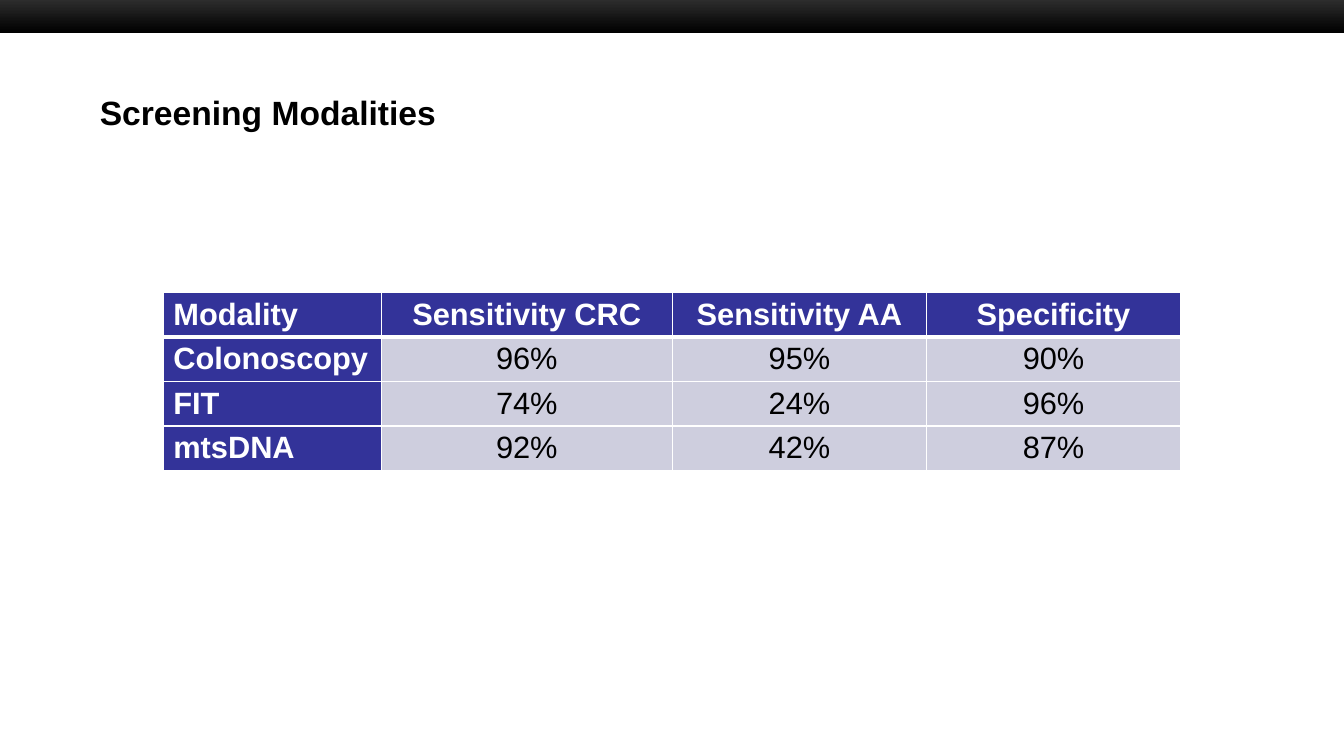
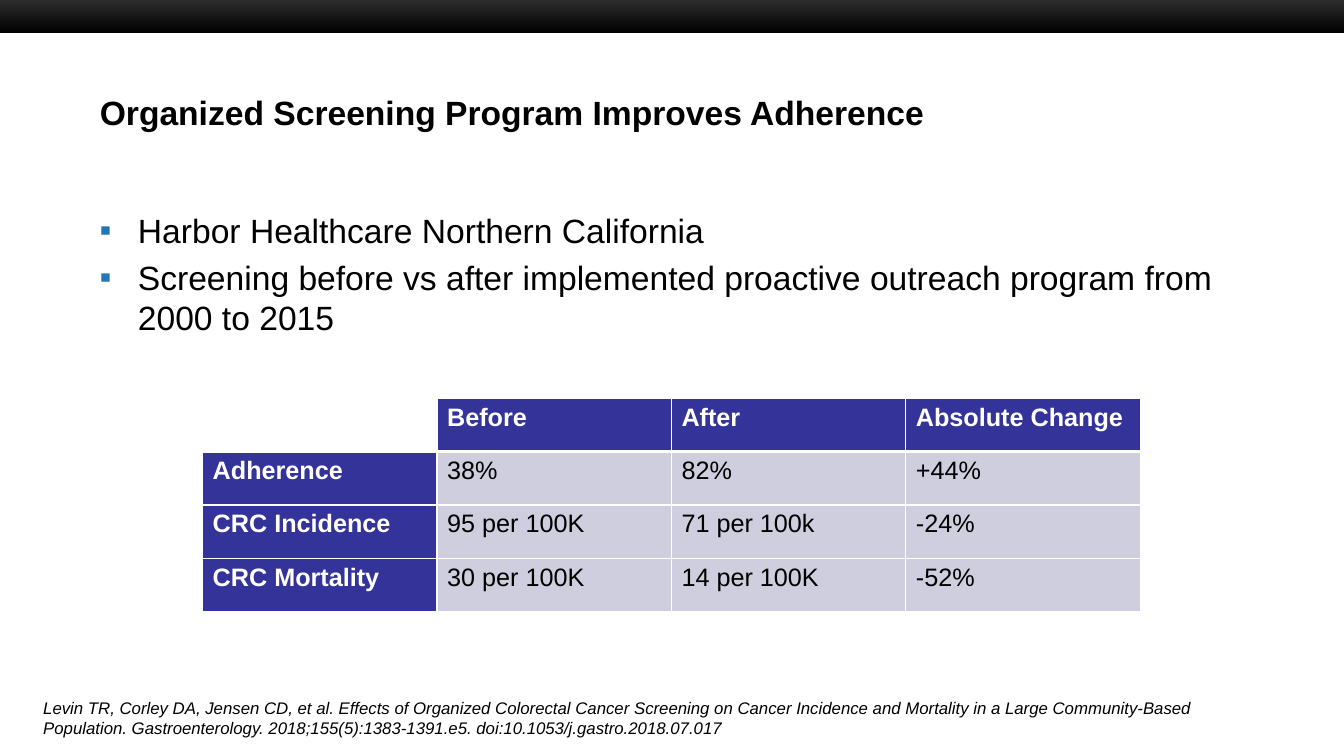
from dataclasses import dataclass

from lxml.etree import SubElement
from pptx import Presentation
from pptx.dml.color import RGBColor
from pptx.enum.shapes import MSO_SHAPE
from pptx.enum.text import MSO_ANCHOR, MSO_AUTO_SIZE, PP_ALIGN
from pptx.oxml.ns import qn
from pptx.slide import Slide
from pptx.table import _Cell as Cell
from pptx.text.text import TextFrame, _Paragraph as Para
from pptx.util import Inches, Pt

BLACK = RGBColor(0x00, 0x00, 0x00)
WHITE = RGBColor(0xFF, 0xFF, 0xFF)
GREY = RGBColor(0x33, 0x33, 0x33)
NAVY = RGBColor(0x33, 0x33, 0x99)
PALE = RGBColor(0xCE, 0xCE, 0xDE)
BLUE = RGBColor(0x26, 0x75, 0xB4)
FONT = "Arial"
WIDTH = 13.33
LEFT = 0.89
SPAN = 11.56


@dataclass(frozen=True)
class Grid:
    left: float
    top: float
    widths: tuple[float, ...]
    height: float
    size: int
    align: PP_ALIGN
    rows: tuple[tuple[str, ...], ...]


MODES = Grid(
    1.62, 2.9, (2.16, 2.89, 2.52, 2.52), 0.42, 22, PP_ALIGN.CENTER,
    (
        ("Modality", "Sensitivity CRC", "Sensitivity AA", "Specificity"),
        ("Colonoscopy", "96%", "95%", "90%"),
        ("FIT", "74%", "24%", "96%"),
        ("mtsDNA", "92%", "42%", "87%"),
    ),
)
CHANGE = Grid(
    2.01, 3.95, (9.3 / 4,) * 4, 0.53, 18, PP_ALIGN.LEFT,
    (
        ("", "Before", "After", "Absolute Change"),
        ("Adherence", "38%", "82%", "+44%"),
        ("CRC Incidence", "95 per 100K", "71 per 100k", "-24%"),
        ("CRC Mortality", "30 per 100K", "14 per 100K", "-52%"),
    ),
)
POINTS = (
    "Harbor Healthcare Northern California",
    "Screening before vs after implemented proactive outreach program from 2000 to 2015",
)
SOURCE = (
    "Levin TR, Corley DA, Jensen CD, et al. Effects of Organized Colorectal Cancer "
    "Screening on Cancer Incidence and Mortality in a Large Community-Based Population. "
    "Gastroenterology. 2018;155(5):1383-1391.e5. doi:10.1053/j.gastro.2018.07.017"
)


def write(para: Para, text: str, size: int, tint: RGBColor = BLACK,
          bold: bool = False, slant: bool = False) -> None:
    run = para.add_run()
    run.text = text
    font = run.font
    font.name, font.size = FONT, Pt(size)
    font.bold, font.italic = bold, slant
    font.color.rgb = tint


def add_band(slide: Slide) -> None:
    band = slide.shapes.add_shape(
        MSO_SHAPE.RECTANGLE, Inches(0), Inches(-0.05), Inches(WIDTH), Inches(0.38))
    band.shadow.inherit = False
    band.line.fill.background()
    band.fill.gradient()
    band.fill.gradient_angle = 270
    for stop, tint, spot in zip(band.fill.gradient_stops, (GREY, BLACK), (0, 1)):
        stop.color.rgb = tint
        stop.position = spot


def add_page(deck: Presentation, text: str) -> Slide:
    slide = deck.slides.add_slide(deck.slide_layouts[5])
    add_band(slide)
    title = slide.shapes.title
    title.left, title.top = Inches(LEFT), Inches(0.83)
    title.width, title.height = Inches(SPAN), Inches(0.75)
    frame = title.text_frame
    frame.auto_size = MSO_AUTO_SIZE.NONE
    frame.vertical_anchor = MSO_ANCHOR.TOP
    frame.margin_top = Inches(0.08)
    para = frame.paragraphs[0]
    para.alignment = PP_ALIGN.LEFT
    write(para, text, 24, bold=True)
    return slide


def add_box(slide: Slide, left: float, top: float, width: float, height: float) -> TextFrame:
    box = slide.shapes.add_textbox(Inches(left), Inches(top), Inches(width), Inches(height))
    box.text_frame.word_wrap = True
    return box.text_frame


def add_list(slide: Slide, items: tuple[str, ...]) -> None:
    frame = add_box(slide, LEFT, 2, SPAN, 4.25)
    frame.margin_top = Inches(0.08)
    for num, item in enumerate(items):
        para = frame.add_paragraph() if num else frame.paragraphs[0]
        props = para._p.get_or_add_pPr()
        props.set("marL", str(Inches(0.38)))
        props.set("indent", str(-Inches(0.38)))
        SubElement(SubElement(props, qn("a:buClr")), qn("a:srgbClr"), val=str(BLUE))
        SubElement(props, qn("a:buFont"), typeface=FONT)
        SubElement(props, qn("a:buChar"), char="▪")
        if num:
            para.space_before = Pt(4.8)
        write(para, item, 24)


def edge(cell: Cell, side: str, width: float) -> None:
    props = cell._tc.get_or_add_tcPr()
    line = SubElement(props, qn(f"a:ln{side}"), w=str(Pt(width)))
    SubElement(SubElement(line, qn("a:solidFill")), qn("a:srgbClr"), val=str(WHITE))


def add_grid(slide: Slide, grid: Grid) -> None:
    count = len(grid.rows)
    table = slide.shapes.add_table(
        count, len(grid.widths), Inches(grid.left), Inches(grid.top),
        Inches(sum(grid.widths)), Inches(grid.height * count)).table
    table.horz_banding = False
    table.first_col = True
    for col, width in zip(table.columns, grid.widths):
        col.width = Inches(width)
    for y, texts in enumerate(grid.rows):
        table.rows[y].height = Inches(grid.height)
        for x, text in enumerate(texts):
            cell = table.cell(y, x)
            for side in "LRTB":
                thick = (y, side) in ((0, "B"), (1, "T"))
                edge(cell, side, 3 if thick else 1)
            if not text:
                cell.fill.background()
                continue
            head = y == 0 or x == 0
            cell.fill.solid()
            cell.fill.fore_color.rgb = NAVY if head else PALE
            para = cell.text_frame.paragraphs[0]
            para.alignment = grid.align if x else PP_ALIGN.LEFT
            write(para, text, grid.size, WHITE if head else BLACK, bold=head)


def main() -> None:
    deck = Presentation()
    deck.slide_width, deck.slide_height = Inches(WIDTH), Inches(7.5)

    add_grid(add_page(deck, "Screening Modalities"), MODES)

    slide = add_page(deck, "Organized Screening Program Improves Adherence")
    add_list(slide, POINTS)
    note = add_box(slide, 0.33, 6.87, 12.35, 0.5)
    write(note.paragraphs[0], SOURCE, 12, slant=True)
    add_grid(slide, CHANGE)

    deck.save("out.pptx")


if __name__ == "__main__":
    main()
